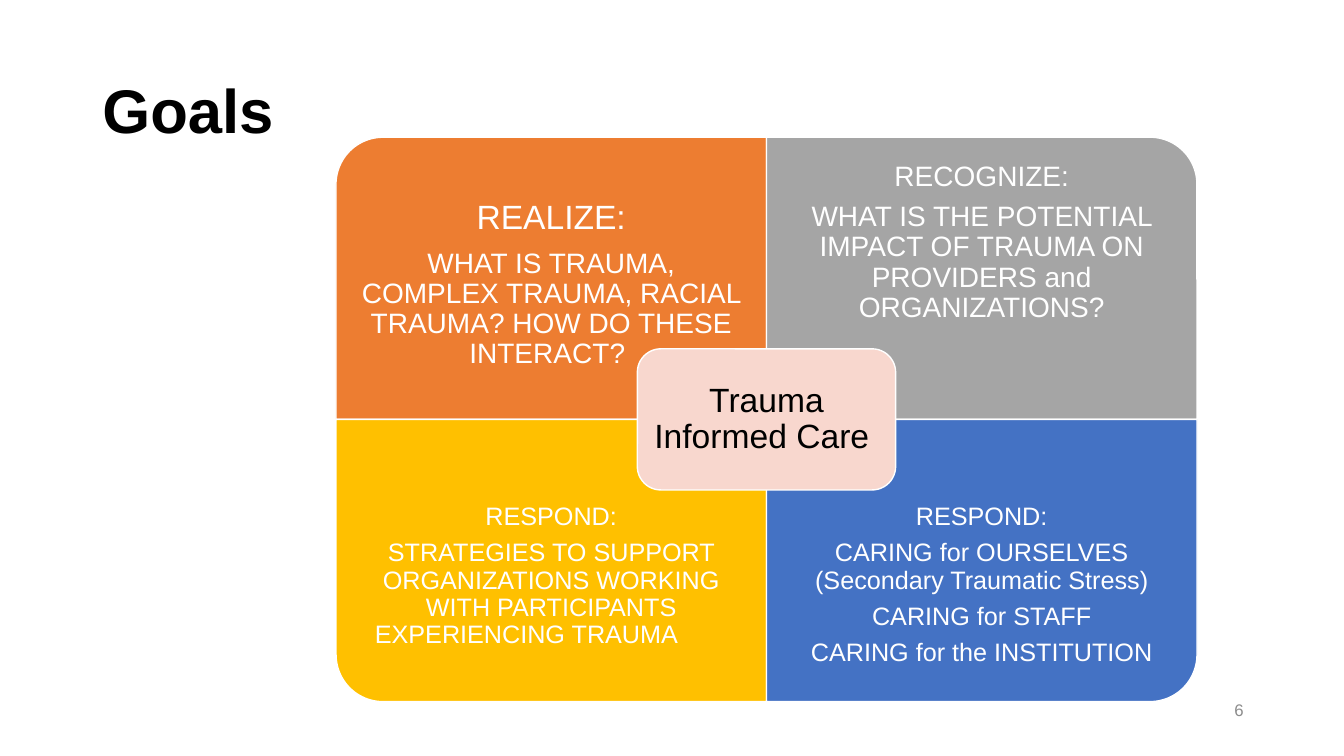
from pptx import Presentation
from pptx.dml.color import RGBColor as RGB
from pptx.enum.shapes import MSO_SHAPE as Shape
from pptx.enum.text import MSO_ANCHOR as Anchor, MSO_AUTO_SIZE as Auto, PP_ALIGN as Align
from pptx.util import Pt

THEME = {
    "font": "Arial", "black": "000000", "white": "FFFFFF", "gray": "8C8C8C",
    "realize": "ED7D31", "recognize": "A5A5A5", "support": "FFC000",
    "caring": "4472C4", "center": "F8D7CE",
    "title": 44, "large": 24, "medium": 20, "small": 18, "page": 12,
}


def write(frame, lines, sizes, color="white", align=Align.CENTER,
          anchor=Anchor.TOP, inset=(7.2, 3.6), top=None, bold=False, lead=0.9):
    side, edge = inset
    frame.word_wrap = True
    frame.auto_size = Auto.NONE
    frame.vertical_anchor = anchor
    frame.margin_left = frame.margin_right = Pt(side)
    frame.margin_top = Pt(edge if top is None else top)
    frame.margin_bottom = Pt(edge)
    for i, line in enumerate(lines):
        para = frame.paragraphs[0] if i == 0 else frame.add_paragraph()
        size = THEME[sizes[min(i, len(sizes) - 1)]]
        para.alignment, para.line_spacing = align, lead
        para.space_before = Pt(0)
        para.space_after = Pt(0.35 * size if i < len(lines) - 1 else 0)
        run = para.add_run()
        run.text = line
        run.font.name, run.font.size, run.font.bold = THEME["font"], Pt(size), bold
        run.font.color.rgb = RGB.from_string(THEME[color])


def block(kind, x, y, w, h, fill):
    box = slide.shapes.add_shape(kind, Pt(x), Pt(y), Pt(w), Pt(h))
    box.shadow.inherit = False
    box.fill.solid()
    box.fill.fore_color.rgb = RGB.from_string(THEME[fill])
    box.line.color.rgb = RGB.from_string(THEME["white"])
    box.line.width = Pt(1)
    return box


deck = Presentation()
deck.slide_width, deck.slide_height = Pt(960), Pt(540)
slide = deck.slides.add_slide(deck.slide_layouts[5])

# Title
title = slide.shapes.title
title.left, title.top, title.width, title.height = Pt(66), Pt(28.8), Pt(828), Pt(104.4)
write(title.text_frame, ["Goals"], ["title"], color="black", align=Align.LEFT,
      anchor=Anchor.MIDDLE, bold=True)

# Four quadrants: column, row, turn, fill, side inset, top inset, sizes, lines
X, Y, W, H = 240, 98, 307.5, 201.6
TEXT_H = H * 0.75
QUADS = [
    (0, 0, 270, "realize", 13.7, 45.5, ["large", "medium"],
     ["REALIZE:", "WHAT IS TRAUMA, COMPLEX TRAUMA, RACIAL TRAUMA? HOW DO THESE INTERACT? "]),
    (1, 0, 0, "recognize", 8.6, 18, ["medium"],
     ["RECOGNIZE:", "WHAT IS THE POTENTIAL IMPACT OF TRAUMA ON PROVIDERS and ORGANIZATIONS?"]),
    (0, 1, 180, "support", 10, 10, ["small"],
     ["RESPOND:", "STRATEGIES TO SUPPORT ORGANIZATIONS WORKING WITH PARTICIPANTS "
      "EXPERIENCING TRAUMA\t"]),
    (1, 1, 90, "caring", 10, 10, ["small"],
     ["RESPOND:", "CARING for OURSELVES (Secondary Traumatic Stress)",
      "CARING for STAFF", "CARING for the INSTITUTION"]),
]
for col, row, turn, fill, side, top, sizes, lines in QUADS:
    x, y = X + col * W, Y + row * H
    w, h = (H, W) if turn in (90, 270) else (W, H)
    quad = block(Shape.ROUND_1_RECTANGLE, x + (W - w) / 2, y + (H - h) / 2, w, h, fill)
    quad.rotation = turn
    label = slide.shapes.add_textbox(Pt(x), Pt(y + row * (H - TEXT_H)), Pt(W), Pt(TEXT_H))
    write(label.text_frame, lines, sizes, inset=(side, side), top=top)

# Center
w, h = W * 0.6, H / 2
core = block(Shape.ROUNDED_RECTANGLE, X + W - w / 2, Y + H - h / 2, w, h, "center")
write(core.text_frame, ["Trauma Informed Care "], ["large"], color="black",
      anchor=Anchor.MIDDLE, inset=(7.2, 7.2))

# Page number
page = slide.shapes.add_textbox(Pt(866), Pt(492.5), Pt(29.5), Pt(28.8))
write(page.text_frame, ["6"], ["page"], color="gray", align=Align.RIGHT,
      anchor=Anchor.MIDDLE, lead=1.0)

deck.save("out.pptx")
